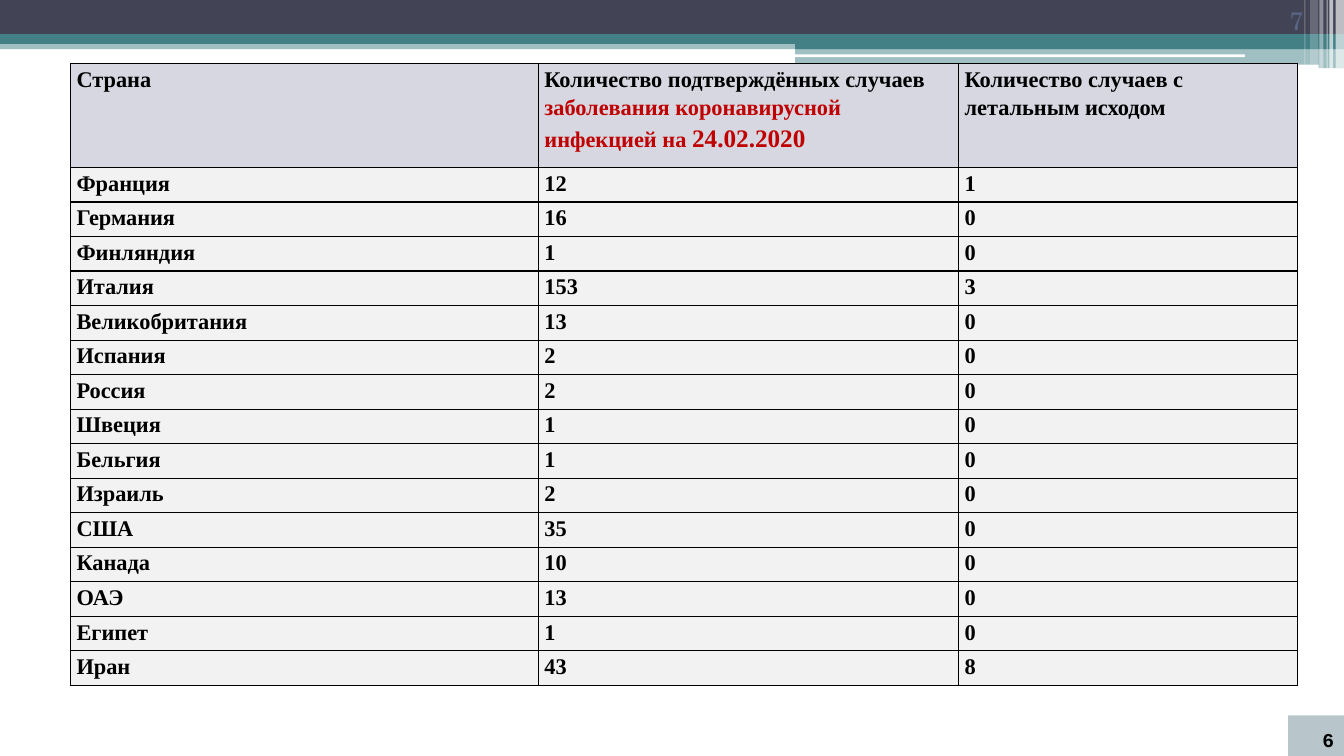
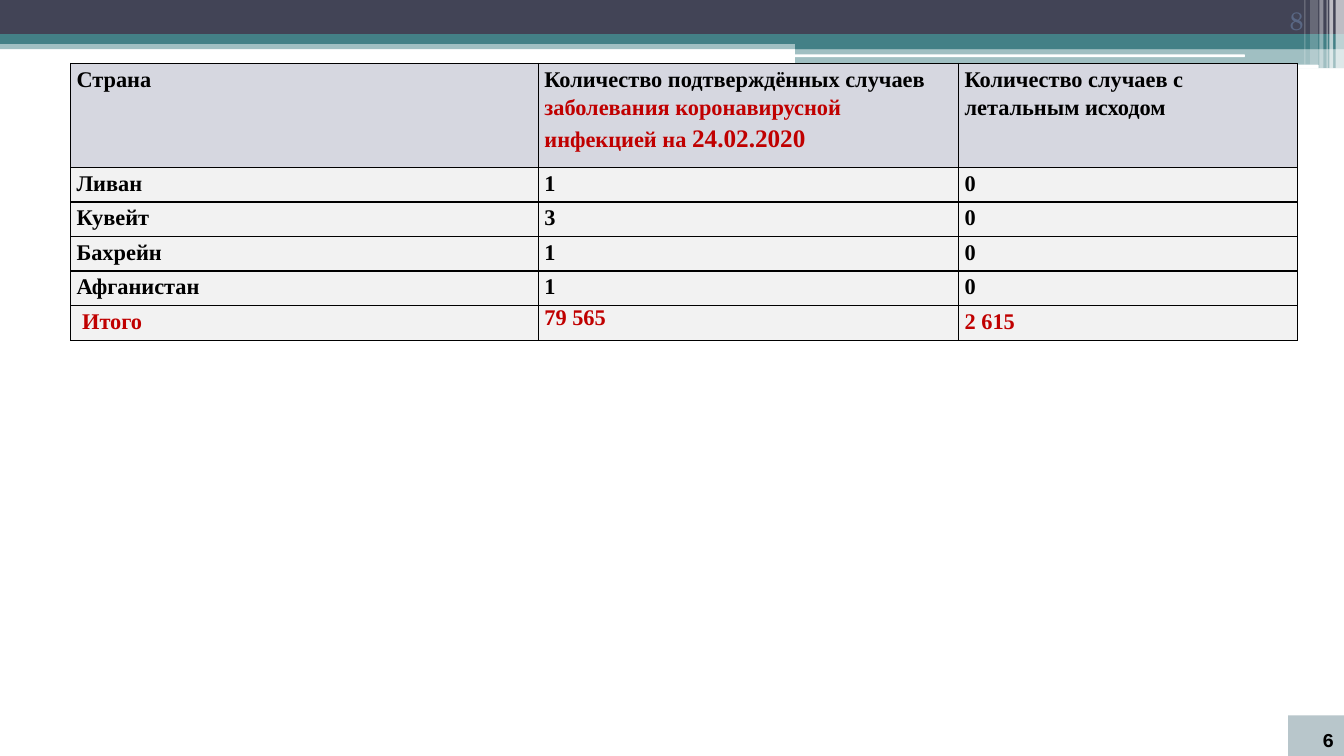
from lxml import etree
from pptx import Presentation
from pptx import util as u
from pptx.dml.color import RGBColor
from pptx.enum import shapes, text
from pptx.oxml.ns import qn

BLACK = RGBColor(0x00, 0x00, 0x00)
WHITE = RGBColor(0xFF, 0xFF, 0xFF)
NAVY = RGBColor(0x42, 0x44, 0x56)
TEAL = RGBColor(0x43, 0x80, 0x86)
SLATE = RGBColor(0x59, 0x67, 0x84)
MIST = RGBColor(0x9B, 0xAF, 0xB5)
RED = RGBColor(0xC0, 0x00, 0x00)
HEAD_FILL = RGBColor(0xD6, 0xD7, 0xE0)
BODY_FILL = RGBColor(0xF2, 0xF2, 0xF2)

RECT = shapes.MSO_SHAPE.RECTANGLE
ROUND = shapes.MSO_SHAPE.ROUNDED_RECTANGLE
WIDTH, HEIGHT = 33.87, 19.05

BANDS = [
    (RECT, 0, 1.01, WIDTH, 0.23, TEAL, 50),
    (RECT, 0, 0, WIDTH, 0.86, NAVY, 100),
    (RECT, 0, 0.86, WIDTH, 0.25, TEAL, 100),
    (RECT, 20.04, 0.99, 13.83, 0.25, TEAL, 100),
    (RECT, 20.04, 1.22, 13.83, 0.42 + 0.08, TEAL, 50),
    (ROUND, 20.02, 1.37, 11.35, 0.07, WHITE, 100),
    (ROUND, 27.31, 1.63, 5.92, 0.1, WHITE, 100),
]
STRIPES = [
    (33.66, 0.21, 1.73, 65),
    (33.5, 0.1, 1.73, 65),
    (33.43, 0.03, 1.73, 60),
    (33.25, 0.1, 1.73, 40),
    (33.02, 0.2, 1.63, 20),
    (32.87, 0.03, 1.63, 30),
]

COLUMNS = (11.79, 10.59, 8.53)
HEAD_HEIGHT, ROW_HEIGHT = 2.62, 0.87
HEADER = (
    [("Страна", BLACK, 16)],
    [("Количество подтверждённых случаев ", BLACK, 16),
     ("заболевания коронавирусной инфекцией на ", RED, 16),
     ("24.02.2020", RED, 18)],
    [("Количество случаев с летальным исходом", BLACK, 16)],
)
FIRST = [
    ("Франция", "12", "1"), ("Германия", "16", "0"), ("Финляндия", "1", "0"),
    ("Италия", "153", "3"), ("Великобритания", "13", "0"), ("Испания", "2", "0"),
    ("Россия", "2", "0"), ("Швеция", "1", "0"), ("Бельгия", "1", "0"),
    ("Израиль", "2", "0"), ("США", "35", "0"), ("Канада", "10", "0"),
    ("ОАЭ", "13", "0"), ("Египет", "1", "0"), ("Иран", "43", "8"),
]
SECOND = [
    ("Ливан", "1", "0"), ("Кувейт", "3", "0"), ("Бахрейн", "1", "0"),
    ("Афганистан", "1", "0"),
]
TOTAL = (" Итого", "79 565", "2 615")


class Deck:
    font = "Times New Roman"
    number_font = "TeX Gyre Schola"
    page_font = "Courier New"

    def __init__(self):
        self.prs = Presentation()
        self.prs.slide_width = u.Cm(WIDTH)
        self.prs.slide_height = u.Cm(HEIGHT)
        self.s = None

    def slide(self):
        self.s = self.prs.slides.add_slide(self.prs.slide_layouts[6])
        for band in BANDS:
            self.shape(*band)
        for x, w, h, alpha in STRIPES:
            self.shape(RECT, x, 0, w, h, WHITE, alpha)

    def shape(self, kind, x, y, w, h, color, alpha):
        sp = self.s.shapes.add_shape(kind, u.Cm(x), u.Cm(y), u.Cm(w), u.Cm(h))
        sp.shadow.inherit = False
        sp.line.fill.background()
        sp.fill.solid()
        sp.fill.fore_color.rgb = color
        if alpha < 100:
            clr = sp._element.spPr.find(qn("a:solidFill"))[0]
            etree.SubElement(clr, qn("a:alpha"), val=str(alpha * 1000))
        return sp

    def style(self, r, font, size, color, bold):
        r.font.name = font
        r.font.size = u.Pt(size)
        r.font.color.rgb = color
        r.font.bold = bold

    def corner_text(self, sp, value, font, size, color, bold):
        tf = sp.text_frame
        tf.text = value
        tf.word_wrap = True
        tf.vertical_anchor = text.MSO_ANCHOR.BOTTOM
        p = tf.paragraphs[0]
        p.alignment = text.PP_ALIGN.RIGHT
        self.style(p.runs[0], font, size, color, bold)

    def numbers(self, number, page):
        sp = self.s.shapes.add_textbox(u.Cm(30.28), 0, u.Cm(2.82), u.Cm(1.02))
        self.corner_text(sp, number, self.number_font, 18, SLATE, False)
        sp = self.shape(RECT, 32.46, 18.03, 1.41, 1.02, MIST, 70)
        self.corner_text(sp, page, self.page_font, 14, BLACK, True)

    def cell(self, cell, runs, fill, spacing=1.15):
        cell.margin_left = cell.margin_right = u.Cm(0.15)
        cell.margin_top = cell.margin_bottom = 0
        tcPr = cell._tc.get_or_add_tcPr()
        for side in ("lnL", "lnR", "lnT", "lnB"):
            ln = etree.SubElement(tcPr, qn(f"a:{side}"), w="12700")
            line_fill = etree.SubElement(ln, qn("a:solidFill"))
            etree.SubElement(line_fill, qn("a:srgbClr"), val=str(BLACK))
        cell.fill.solid()
        cell.fill.fore_color.rgb = fill
        p = cell.text_frame.paragraphs[0]
        p.line_spacing = spacing
        for value, color, size in runs:
            r = p.add_run()
            r.text = value
            self.style(r, self.font, size, color, True)

    def table(self, rows, total=None):
        body = rows + ([total] if total else [])
        height = HEAD_HEIGHT + ROW_HEIGHT * len(body)
        tbl = self.s.shapes.add_table(
            len(body) + 1, len(COLUMNS), u.Cm(1.78), u.Cm(1.6),
            u.Cm(sum(COLUMNS)), u.Cm(height)).table
        for col, width in zip(tbl.columns, COLUMNS):
            col.width = u.Cm(width)
        for i, row in enumerate(tbl.rows):
            row.height = u.Cm(ROW_HEIGHT if i else HEAD_HEIGHT)
        for j, runs in enumerate(HEADER):
            self.cell(tbl.cell(0, j), runs, HEAD_FILL)
        for i, values in enumerate(body, 1):
            color = RED if values is total else BLACK
            for j, value in enumerate(values):
                spacing = 1 if values is total and j == 1 else 1.15
                self.cell(tbl.cell(i, j), [(value, color, 16)], BODY_FILL, spacing)


def main():
    deck = Deck()
    for number, rows, total in (("7", FIRST, None), ("8", SECOND, TOTAL)):
        deck.slide()
        deck.table(rows, total)
        deck.numbers(number, "6")
    deck.prs.save("out.pptx")


if __name__ == "__main__":
    main()
